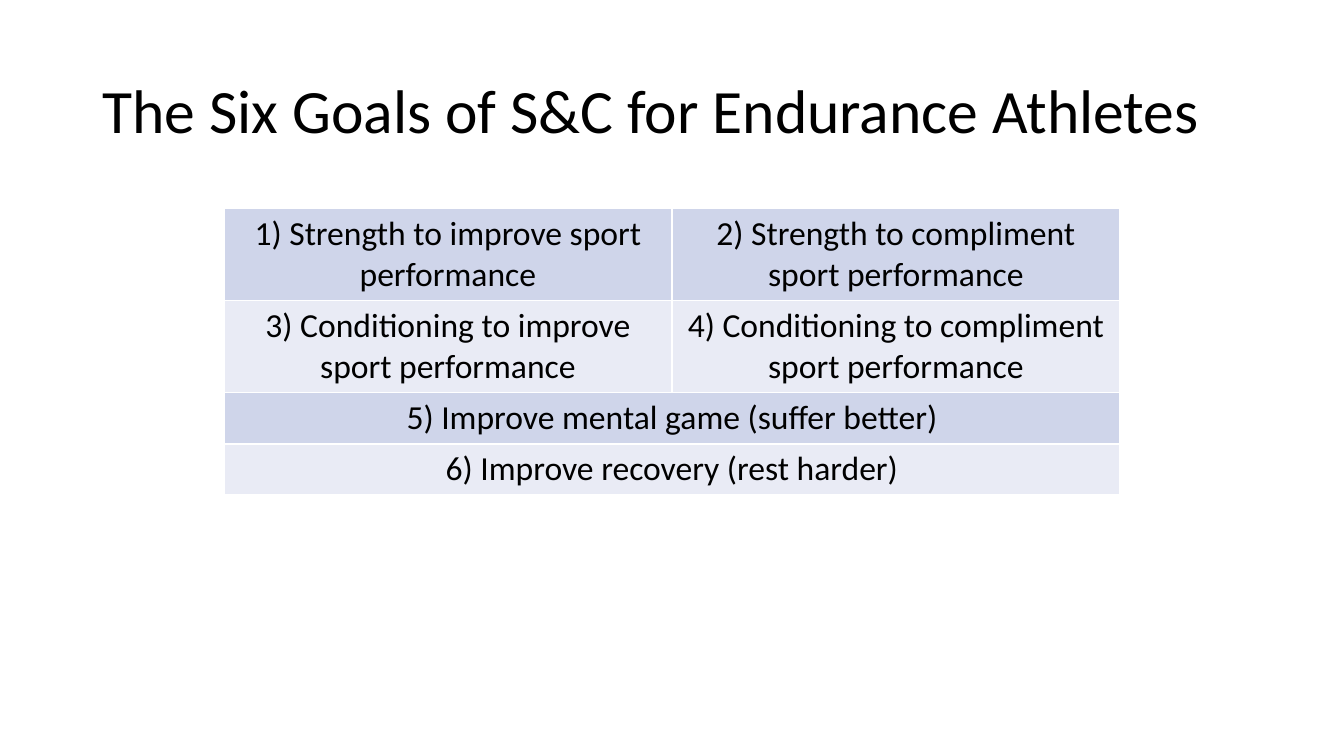
from pptx import Presentation
from pptx.dml.color import RGBColor
from pptx.enum import text as t
from pptx.oxml import parse_xml
from pptx.oxml.ns import nsdecls
from pptx.util import Pt

TITLE = "The Six Goals of S&C for Endurance Athletes"
GOALS = [
    ("1) Strength to improve sport performance",
     "2) Strength to compliment sport performance"),
    ("3) Conditioning to improve sport performance",
     "4) Conditioning to compliment sport performance"),
    ("5) Improve mental game (suffer better)",),
    ("6) Improve recovery (rest harder)",),
]

BLACK = RGBColor(0x00, 0x00, 0x00)
WHITE = RGBColor(0xFF, 0xFF, 0xFF)
BANDS = [RGBColor(0xCF, 0xD5, 0xEA), RGBColor(0xE9, 0xEB, 0xF5)]
FONT = "Calibri"
LEFT, TOP, WIDTH = 160, 149, 640
TALL, SHORT = 65.5, 36.5
COLS = 2


def write(frame, words, size=24, align=t.PP_ALIGN.CENTER, space=1.0):
    para = frame.paragraphs[0]
    para.alignment = align
    para.line_spacing = space
    run = para.add_run()
    run.text = words
    run.font.name = FONT
    run.font.size = Pt(size)
    run.font.bold = False
    run.font.color.rgb = BLACK


def border(cell):
    props = cell._tc.get_or_add_tcPr()
    for side in "LRTB":
        props.append(parse_xml(
            f'<a:ln{side} {nsdecls("a")} w="{Pt(1)}"><a:solidFill>'
            f'<a:srgbClr val="{WHITE}"/></a:solidFill></a:ln{side}>'))


def main():
    deck = Presentation()
    deck.slide_width, deck.slide_height = Pt(960), Pt(540)
    slide = deck.slides.add_slide(deck.slide_layouts[5])

    title = slide.shapes.title
    title.left, title.top = Pt(66), Pt(28.75)
    title.width, title.height = Pt(828), Pt(104.4)
    title.text_frame.auto_size = t.MSO_AUTO_SIZE.NONE
    title.text_frame.vertical_anchor = t.MSO_ANCHOR.MIDDLE
    write(title.text_frame, TITLE, size=44, align=t.PP_ALIGN.LEFT, space=0.9)

    highs = [TALL if len(row) == COLS else SHORT for row in GOALS]
    table = slide.shapes.add_table(
        len(GOALS), COLS, Pt(LEFT), Pt(TOP), Pt(WIDTH), Pt(sum(highs))).table
    table.first_row = False
    for r, (row, high) in enumerate(zip(GOALS, highs)):
        table.rows[r].height = Pt(high)
        for c in range(COLS):
            cell = table.cell(r, c)
            border(cell)
            cell.fill.solid()
            cell.fill.fore_color.rgb = BANDS[r % 2]
        if len(row) < COLS:
            table.cell(r, 0).merge(table.cell(r, COLS - 1))
        for c, words in enumerate(row):
            write(table.cell(r, c).text_frame, words)

    deck.save("out.pptx")


if __name__ == "__main__":
    main()
